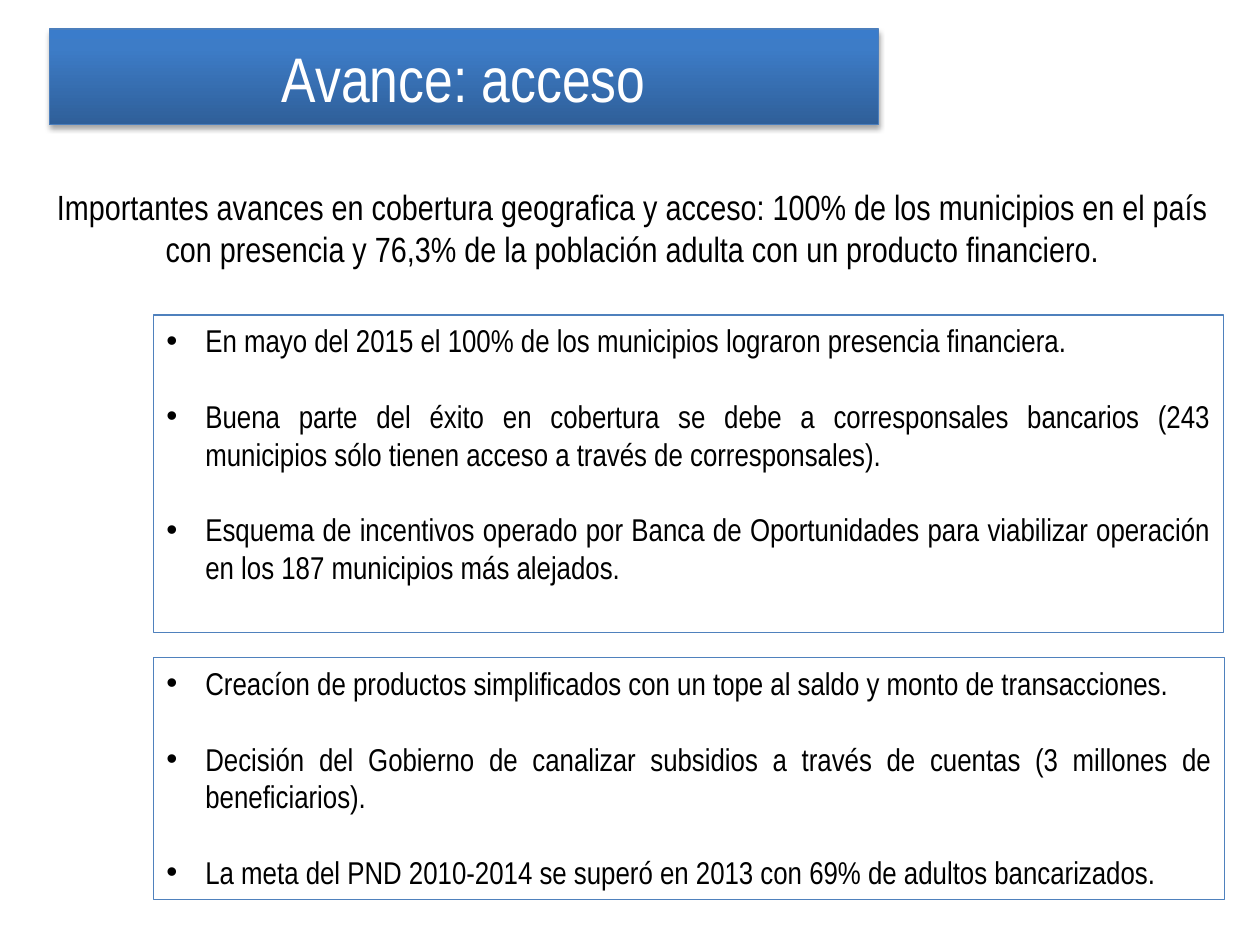
from copy import deepcopy
from dataclasses import dataclass

from lxml.etree import SubElement
from pptx import Presentation
from pptx.dml.color import RGBColor as RGB
from pptx.enum.text import MSO_ANCHOR as Anchor, MSO_AUTO_SIZE as AutoSize, PP_ALIGN as Align
from pptx.oxml.ns import qn
from pptx.util import Inches, Pt


@dataclass(frozen=True)
class Theme:
    font: str = "Arial Narrow"
    text: str = "000000"
    title_text: str = "FFFFFF"
    panel: str = "FFFFFF"
    panel_line: str = "4F81BD"
    title_line: str = "4B7EBC"
    title_stops: tuple = ((0, "2F5F99"), (0.8, "3D7CC7"), (1, "3A7CCB"))
    shadow: str = "000000"
    title_size: float = 36
    intro_size: float = 20
    list_size: float = 18
    list_gap: float = 21.6
    line_width: float = 0.75


THEME = Theme()

TITLE = "Avance: acceso"
INTRO = ("Importantes avances en cobertura geografica y acceso: 100% de los municipios en el país "
         "con presencia y 76,3% de la población adulta con un producto financiero.")
COVERAGE = [
    "En mayo del 2015 el 100% de los municipios lograron presencia financiera.",
    "Buena parte del éxito en cobertura se debe a corresponsales bancarios "
    "(243 municipios sólo tienen acceso a través de corresponsales).",
    "Esquema de incentivos operado por Banca de Oportunidades para viabilizar operación "
    "en los 187 municipios más alejados.",
]
ACCESS = [
    "Creacíon de productos simplificados con un tope al saldo y monto de transacciones.",
    "Decisión del Gobierno de canalizar subsidios a través de cuentas "
    "(3 millones de beneficiarios).",
    "La meta del PND 2010-2014 se superó en 2013 con 69% de adultos bancarizados.",
]


def place(sp, box):
    sp.left, sp.top, sp.width, sp.height = (Inches(v) for v in box)


def set_frame(sp, anchor):
    tf = sp.text_frame
    tf.word_wrap = True
    tf.auto_size = AutoSize.NONE
    tf.vertical_anchor = anchor
    return tf


def format_text(p, size, color, align):
    p.alignment = align
    p.space_before = Pt(0)
    for r in p.runs:
        r.font.name = THEME.font
        r.font.size = Pt(size)
        r.font.color.rgb = RGB.from_string(color)


def outline(sp, color):
    sp.line.color.rgb = RGB.from_string(color)
    sp.line.width = Pt(THEME.line_width)


def fill_gradient(sp, stops):
    sp.fill.gradient()
    sp.fill.gradient_angle = 90
    gs_list = sp._element.spPr.find(".//" + qn("a:gsLst"))
    while len(gs_list) < len(stops):
        gs_list.append(deepcopy(gs_list[-1]))
    for stop, (position, color) in zip(sp.fill.gradient_stops, stops):
        stop.position = position
        stop.color.rgb = RGB.from_string(color)


def add_shadow(sp):
    effects = SubElement(sp._element.spPr, qn("a:effectLst"))
    shadow = SubElement(effects, qn("a:outerShdw"), blurRad=str(Pt(3.1)), dist=str(Pt(1.8)),
                        dir="5400000", rotWithShape="0")
    color = SubElement(shadow, qn("a:srgbClr"), val=THEME.shadow)
    SubElement(color, qn("a:alpha"), val="35000")


def set_bullet(p, indent):
    pPr = p._p.get_or_add_pPr()
    pPr.set("marL", str(indent))
    pPr.set("indent", str(-indent))
    SubElement(pPr, qn("a:buFont"), typeface="Arial")
    SubElement(pPr, qn("a:buChar"), char="•")


def title_banner(sp, box, text):
    place(sp, box)
    fill_gradient(sp, THEME.title_stops)
    outline(sp, THEME.title_line)
    add_shadow(sp)
    tf = set_frame(sp, Anchor.MIDDLE)
    tf.text = text
    format_text(tf.paragraphs[0], THEME.title_size, THEME.title_text, Align.CENTER)


def intro_text(slide, box, text):
    sp = slide.shapes.add_textbox(*(Inches(v) for v in box))
    tf = set_frame(sp, Anchor.TOP)
    tf.text = text
    format_text(tf.paragraphs[0], THEME.intro_size, THEME.text, Align.CENTER)


def list_panel(sp, box, items):
    place(sp, box)
    sp.fill.solid()
    sp.fill.fore_color.rgb = RGB.from_string(THEME.panel)
    outline(sp, THEME.panel_line)
    tf = set_frame(sp, Anchor.TOP)
    tf.text = "\n".join(items)
    for i, p in enumerate(tf.paragraphs):
        set_bullet(p, Inches(0.31))
        format_text(p, THEME.list_size, THEME.text, Align.JUSTIFY)
        if i:
            p.space_before = Pt(THEME.list_gap)


def main():
    prs = Presentation()
    prs.slide_width, prs.slide_height = Inches(10), Inches(7.5)
    two_content = prs.slide_layouts[3]
    slide = prs.slides.add_slide(two_content)
    title, upper, lower = list(slide.placeholders)[:3]
    title_banner(title, (0.39, 0.23, 6.58, 0.76), TITLE)
    intro_text(slide, (0.22, 1.42, 9.6, 0.77), INTRO)
    list_panel(upper, (1.22, 2.5, 8.49, 2.52), COVERAGE)
    list_panel(lower, (1.22, 5.22, 8.5, 1.92), ACCESS)
    prs.save("out.pptx")


if __name__ == "__main__":
    main()
